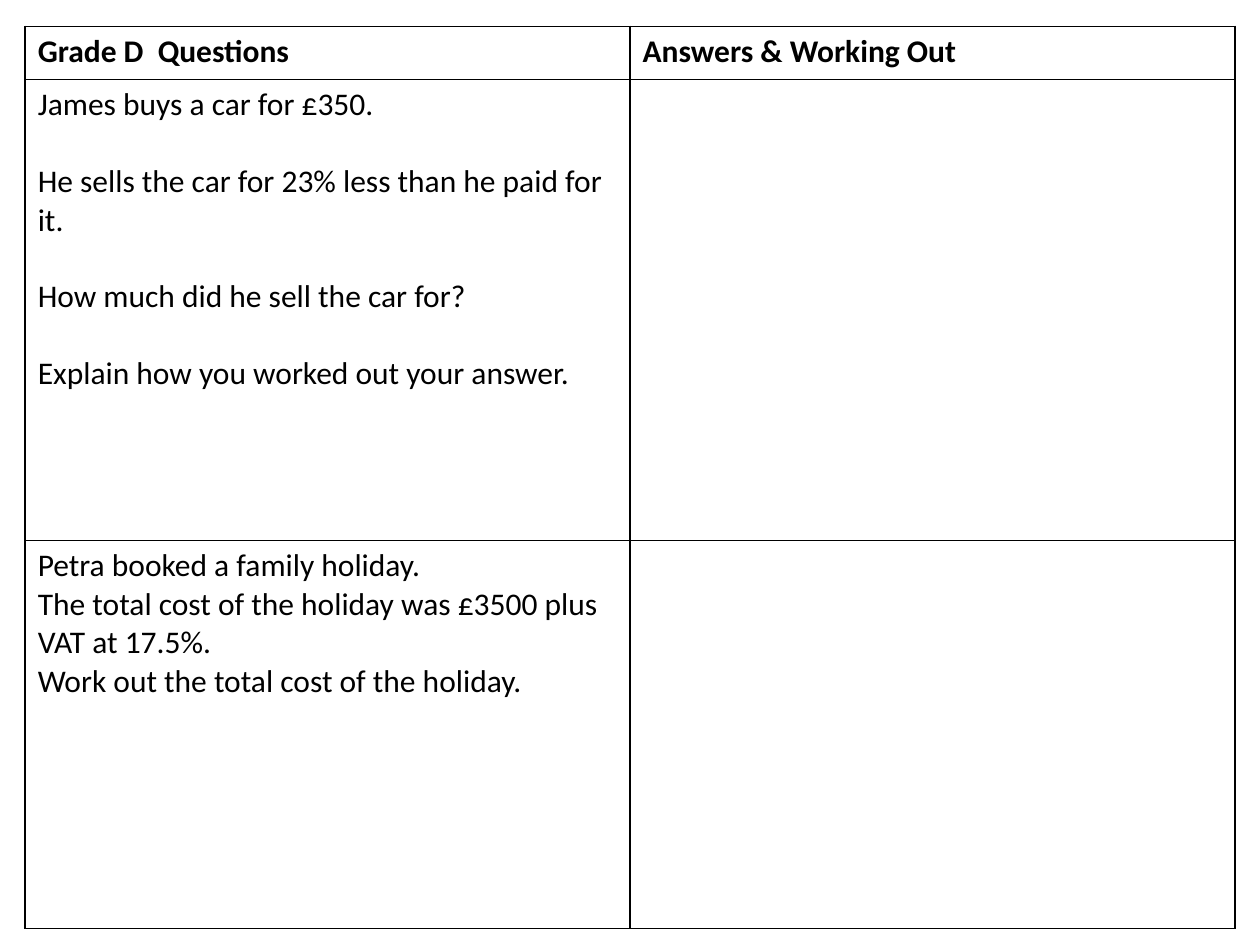
from lxml import etree
from pptx import Presentation
from pptx.dml.color import RGBColor
from pptx.oxml.ns import qn
from pptx.util import Inches, Pt

BLACK = RGBColor(0, 0, 0)
WHITE = RGBColor(255, 255, 255)
FONT = {"name": "Calibri", "size": Pt(18)}
WIDTH = 4.8
HEIGHTS = [0.42, 3.66, 3.08]

# Each row: cell texts as paragraphs, bold, gap before later paragraphs
ROWS = [
    ([["Grade D  Questions"], ["Answers & Working Out"]], True, 0),
    ([["James buys a car for £350.",
       "He sells the car for 23% less than he paid for it.",
       "How much did he sell the car for?",
       "Explain how you worked out your answer."], []], False, 22),
    ([["Petra booked a family holiday.",
       "The total cost of the holiday was £3500 plus VAT at 17.5%.",
       "Work out the total cost of the holiday."], []], False, 0),
]


def add_borders(cell):
    props = cell._tc.get_or_add_tcPr()
    for place, side in enumerate(("lnL", "lnR", "lnT", "lnB")):
        line = etree.Element(qn(f"a:{side}"), w=str(Pt(1)))
        fill = etree.SubElement(line, qn("a:solidFill"))
        etree.SubElement(fill, qn("a:srgbClr"), val=str(BLACK))
        props.insert(place, line)


deck = Presentation()
deck.slide_width, deck.slide_height = Inches(10), Inches(7.5)
slide = deck.slides.add_slide(deck.slide_layouts[6])

table = slide.shapes.add_table(
    len(HEIGHTS), 2, Inches(0.2), Inches(0.21),
    Inches(2 * WIDTH), Inches(sum(HEIGHTS))).table
table.first_row = table.horz_banding = False
for column in table.columns:
    column.width = Inches(WIDTH)

for row, height, (texts, bold, gap) in zip(table.rows, HEIGHTS, ROWS):
    row.height = Inches(height)
    for cell, lines in zip(row.cells, texts):
        cell.fill.solid()
        cell.fill.fore_color.rgb = WHITE
        add_borders(cell)
        frame = cell.text_frame
        for index, line in enumerate(lines):
            para = frame.add_paragraph() if index else frame.paragraphs[0]
            para.space_before = Pt(gap if index else 0)
            run = para.add_run()
            run.text = line
            for key, value in FONT.items():
                setattr(run.font, key, value)
            run.font.bold = bold
            run.font.color.rgb = BLACK

deck.save("out.pptx")
